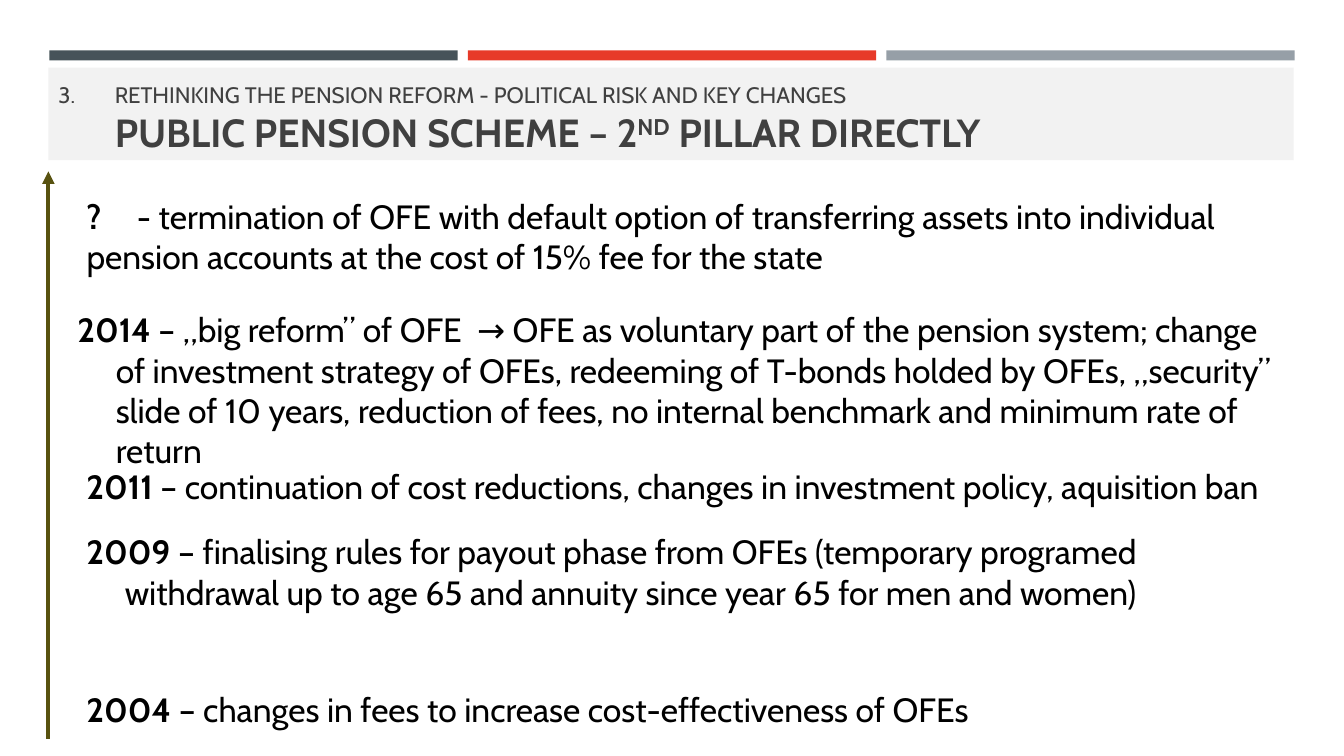
"""Builds the slide on changes to the second pension pillar."""
from lxml.etree import SubElement as Sub
from pptx import Presentation
from pptx.dml.color import RGBColor as Rgb
from pptx.enum.shapes import MSO_CONNECTOR as Conn, MSO_SHAPE as Shape
from pptx.enum.text import MSO_ANCHOR as Anchor, PP_ALIGN as Align
from pptx.oxml.ns import qn
from pptx.util import Inches as In, Pt

show = Presentation()
show.slide_width, show.slide_height = In(13.33), In(7.5)
slide = show.slides.add_slide(show.slide_layouts[6])
shapes = slide.shapes


def block(x, y, w, h, tint):
    """Adds a plain filled rectangle."""
    box = shapes.add_shape(Shape.RECTANGLE, In(x), In(y), In(w), In(h))
    box.shadow.inherit = False
    box.fill.solid()
    box.fill.fore_color.rgb = Rgb.from_string(tint)
    box.line.fill.background()
    return box


def write(para, text, size, tint, bold=False):
    """Adds one styled run to a paragraph."""
    run = para.add_run()
    run.text = text
    font = run.font
    font.name, font.size, font.bold = "Cabin", Pt(size), bold
    font.color.rgb = Rgb.from_string(tint)
    return run


left, bar, gap = 0.49, 4.05, 0.1
for col, tint in enumerate(["465359", "E73A29", "969FA7"]):
    block(left + col * (bar + gap), 0.5, bar, 0.1, tint)

gray = "404040"
frame = block(0.48, 0.67, 12.35, 0.92, "F2F2F2").text_frame
frame.word_wrap = True
frame.vertical_anchor = Anchor.BOTTOM
para = frame.paragraphs[0]
para.alignment = Align.LEFT
props = para._p.get_or_add_pPr()
props.set("marL", str(In(0.56)))
props.set("indent", str(In(-0.56)))
Sub(props, qn("a:buFont"), typeface="+mj-lt")
Sub(props, qn("a:buAutoNum"), type="arabicPeriod", startAt="3")
write(para, "RETHINKING THE PENSION REFORM - POLITICAL RISK AND KEY CHANGES", 16, gray)
para.add_line_break()
write(para, "PUBLIC PENSION SCHEME – 2", 28, gray, True)
power = write(para, "ND", 28, gray, True)
power._r.get_or_add_rPr().set("baseline", "30000")
write(para, " PILLAR DIRECTLY", 28, gray, True)

axis = shapes.add_connector(Conn.STRAIGHT, In(0.48), In(7.33), In(0.48), In(1.7))
axis.line.width = Pt(3)
axis.line.color.rgb = Rgb.from_string("585210")
Sub(axis.line._get_or_add_ln(), qn("a:tailEnd"), type="triangle")
Sub(axis._element.spPr, qn("a:effectLst"))

events = [
    (0.67, 3.02, 12.16, 0.38, "2014 ",
     "– „big reform” of OFE  → OFE as voluntary part of the pension system; "
     "change of investment strategy of OFEs, redeeming of T-bonds holded by "
     "OFEs, „security” slide of 10 years, reduction of fees, no internal "
     "benchmark and minimum rate of return"),
    (0.76, 4.57, 12.16, 0.38, "2011 ",
     "– continuation of cost reductions, changes in investment policy, "
     "aquisition ban"),
    (0.76, 5.22, 12.16, 0.38, "2009 ",
     "– finalising rules for payout phase from OFEs (temporary programed "
     "withdrawal up to age 65 and annuity since year 65 for men and women)"),
    (0.76, 6.79, 12.16, 0.38, "2004 ",
     "– changes in fees to increase cost-effectiveness of OFEs"),
    (0.76, 1.89, 11.78, 0, "?\t",
     "- termination of OFE with default option of transferring assets into "
     "individual pension accounts at the cost of 15% fee for the state"),
]
for x, y, wide, hang, year, text in events:
    frame = shapes.add_textbox(In(x), In(y), In(wide), In(0.9)).text_frame
    frame.word_wrap = True
    para = frame.paragraphs[0]
    props = para._p.get_or_add_pPr()
    props.set("marL", str(In(hang)))
    props.set("indent", str(In(-hang)))
    if not hang:
        Sub(Sub(props, qn("a:tabLst")), qn("a:tab"), pos=str(In(0.6)), algn="l")
    write(para, year, 24, "000000", True)
    write(para, text, 24, "000000")

show.save("out.pptx")
